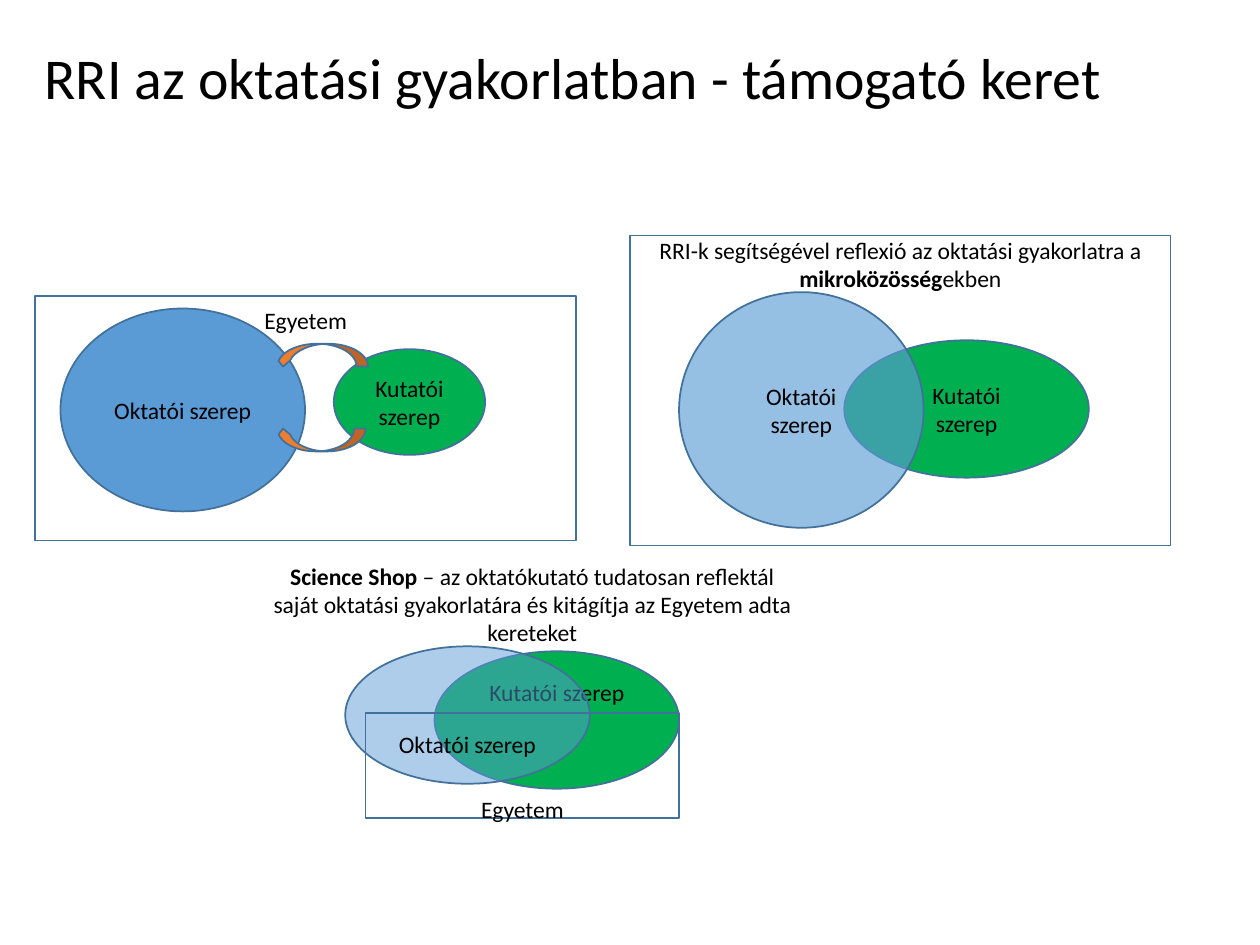
from dataclasses import dataclass
from typing import Optional

from lxml import etree
from pptx import Presentation
from pptx.dml.color import RGBColor
from pptx.enum import shapes, text
from pptx.oxml import ns
from pptx.util import Cm, Pt

BLUE, GREEN, ORANGE = "5B9BD5", "00B050", "ED7D31"
OUTLINE, BLACK = "42719B", "000000"
ELLIPSE = shapes.MSO_SHAPE.OVAL
RECT = shapes.MSO_SHAPE.RECTANGLE
ARROW = shapes.MSO_SHAPE.CURVED_DOWN_ARROW
ROLE_W, ROLE_H = 4.93, 2.77
FRAME_W = 10.9


@dataclass
class Box:
    """A shape in cm; *stars* mark bold, and top is the inset of top-anchored text."""
    kind: Optional[shapes.MSO_SHAPE]
    x: float
    y: float
    w: float
    h: float
    lines: tuple[str, ...] = ()
    fill: Optional[str] = None
    alpha: int = 100
    top: Optional[float] = None
    size: float = 13.5
    align: text.PP_ALIGN = text.PP_ALIGN.CENTER
    spacing: float = 1.0
    flip: bool = False
    rotation: int = 0


BOXES = [
    Box(None, 0.71, 0.89, 22.43, 1.47, ("RRI az oktatási gyakorlatban - támogató keret",),
        size=33, align=text.PP_ALIGN.LEFT, spacing=0.9),
    Box(ELLIPSE, 6.73, 7.04, 3.05, 2.13, ("Kutatói szerep",), GREEN),
    Box(ELLIPSE, 1.22, 6.22, ROLE_W, 4.09, ("Oktatói szerep",), BLUE),
    Box(ELLIPSE, 17.02, 6.86, ROLE_W, ROLE_H, ("Kutatói", "szerep"), GREEN),
    Box(ELLIPSE, 8.76, 13.13, ROLE_W, ROLE_H, ("Kutatói szerep",), GREEN, top=0.14),
    Box(ELLIPSE, 13.69, 5.89, ROLE_W, 4.75, ("Oktatói", "szerep"), BLUE, alpha=64),
    Box(ELLIPSE, 6.96, 13.03, ROLE_W, ROLE_H, ("Oktatói szerep",), BLUE, alpha=49, top=1.27),
    Box(RECT, 0.71, 5.97, FRAME_W, 4.93, ("Egyetem",), top=0.2),
    Box(RECT, 12.7, 4.75, FRAME_W, 6.25,
        ("RRI-k segítségével reflexió az oktatási gyakorlatra a *mikroközösség*ekben",), top=0),
    Box(None, 5.28, 11.25, FRAME_W, 5.23,
        ("*Science Shop* – az oktatókutató tudatosan reflektál saját oktatási "
         "gyakorlatára és kitágítja az Egyetem adta kereteket",), top=0.07),
    Box(ARROW, 5.59, 6.93, 1.83, 0.46, fill=ORANGE, flip=True),
    Box(ARROW, 5.59, 8.64, 1.78, 0.46, fill=ORANGE, rotation=180),
    Box(RECT, 7.37, 14.38, 6.32, 2.11, ("Egyetem",), top=1.65),
]


def rgb(value: str) -> RGBColor:
    return RGBColor.from_string(value)


def style(sp, box: Box) -> None:
    sp.shadow.inherit = False
    sp.line.color.rgb = rgb(OUTLINE)
    sp.line.width = Pt(1)
    sp.rotation = box.rotation
    if box.fill is None:
        sp.fill.background()
    else:
        sp.fill.solid()
        sp.fill.fore_color.rgb = rgb(box.fill)
    if box.alpha < 100:
        color = sp._element.spPr.find(ns.qn("a:solidFill"))[0]
        etree.SubElement(color, ns.qn("a:alpha"), val=str(box.alpha * 1000))
    if box.flip:
        sp._element.spPr.find(ns.qn("a:xfrm")).set("flipH", "1")
    if box.kind == ARROW:
        for i, value in enumerate((0.5, 0.5, 0.25)):
            sp.adjustments[i] = value


def write(sp, box: Box) -> None:
    tf = sp.text_frame
    tf.word_wrap = True
    tf.auto_size = text.MSO_AUTO_SIZE.NONE
    tf.margin_left = tf.margin_right = Cm(0.19)
    if box.top is None:
        tf.vertical_anchor = text.MSO_ANCHOR.MIDDLE
        tf.margin_top = tf.margin_bottom = Cm(0.1)
    else:
        tf.vertical_anchor = text.MSO_ANCHOR.TOP
        tf.margin_top, tf.margin_bottom = Cm(box.top), 0
    for i, line in enumerate(box.lines):
        p = tf.add_paragraph() if i else tf.paragraphs[0]
        p.alignment = box.align
        p.line_spacing = box.spacing
        p.font.name = "Calibri"
        p.font.size = Pt(box.size)
        p.font.color.rgb = rgb(BLACK)
        for j, part in enumerate(line.split("*")):
            if part:
                r = p.add_run()
                r.text = part
                if j % 2:
                    r.font.bold = True


def draw(s, box: Box) -> None:
    place = [Cm(v) for v in (box.x, box.y, box.w, box.h)]
    if box.kind is None:
        sp = s.shapes.add_textbox(*place)
    else:
        sp = s.shapes.add_shape(box.kind, *place)
        style(sp, box)
    if box.lines:
        write(sp, box)


def main() -> None:
    prs = Presentation()
    prs.slide_width, prs.slide_height = Cm(25.4), Cm(19.05)
    s = prs.slides.add_slide(prs.slide_layouts[6])
    for box in BOXES:
        draw(s, box)
    prs.save("out.pptx")


if __name__ == "__main__":
    main()
